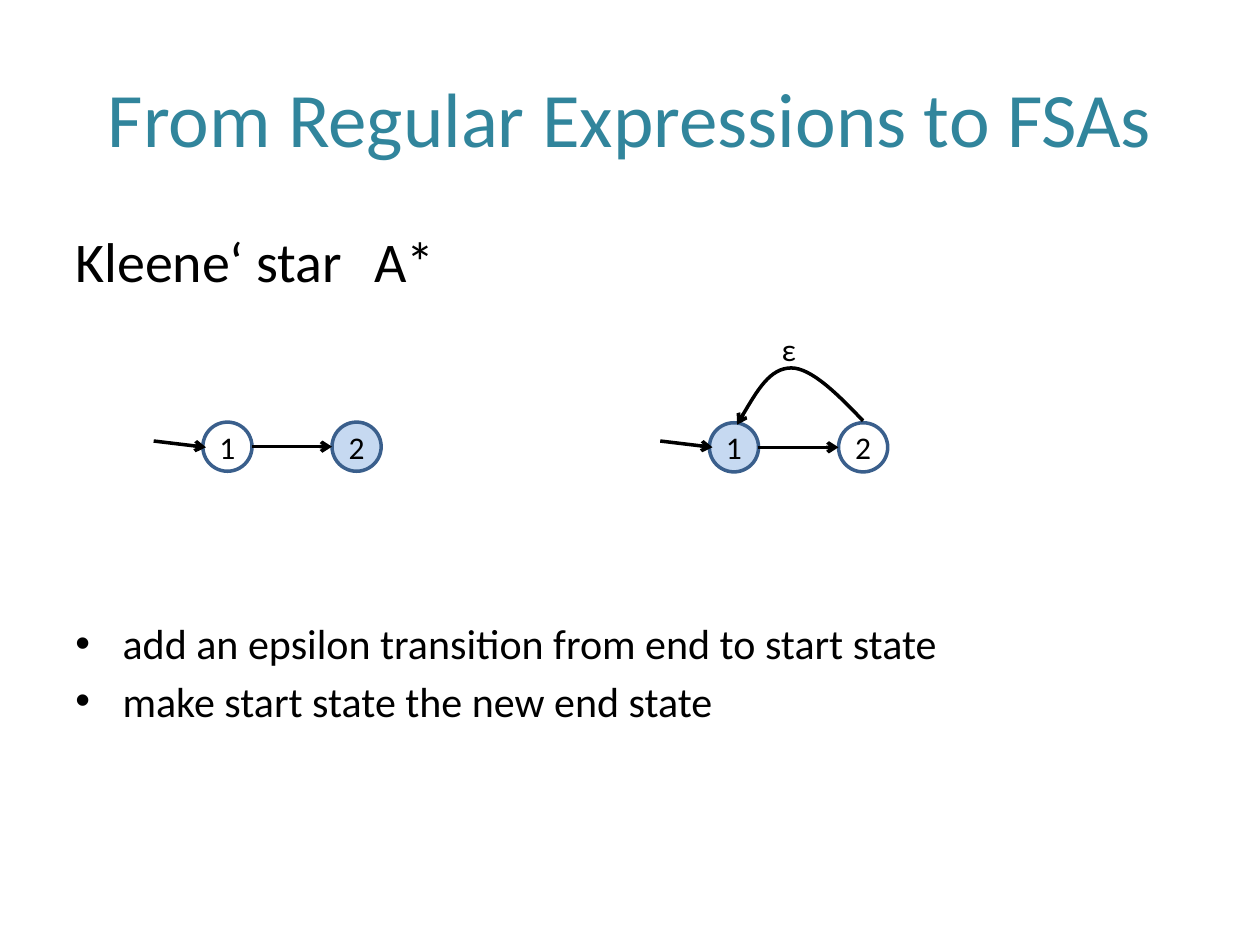
import dataclasses

import pptx
import pptx.dml.color
import pptx.enum.shapes
import pptx.enum.text
import pptx.oxml
import pptx.oxml.ns
import pptx.util

qn = pptx.oxml.ns.qn
Pt = pptx.util.Pt
ALIGN = pptx.enum.text.PP_ALIGN
ANCHOR = pptx.enum.text.MSO_ANCHOR


def rgb(value):
    return pptx.dml.color.RGBColor.from_string(value)


@dataclasses.dataclass(frozen=True)
class Theme:
    font: str = "Calibri"
    title: str = "31859C"
    ink: str = "000000"
    ring: str = "3A5F8C"
    accepting: str = "C6D9F1"
    title_size: int = 44
    heading_size: int = 32
    bullet_size: int = 24
    label_size: int = 18
    stroke: int = 2


class Deck:
    """Draws on one slide; lengths are cells of a 100 by 75 grid."""

    COLUMNS, ROWS = 100, 75
    STATE = 3.9     # diameter of a state
    STEP = 10.25    # distance between neighbouring states

    def __init__(self, prs, theme):
        self.theme = theme
        self.cell_w = prs.slide_width / self.COLUMNS
        self.cell_h = prs.slide_height / self.ROWS
        self.slide = prs.slides.add_slide(prs.slide_layouts[5])

    def at(self, *cells):
        """Turn alternating columns and rows into slide lengths."""
        sizes = (self.cell_w, self.cell_h)
        return [pptx.util.Emu(round(c * sizes[i % 2])) for i, c in enumerate(cells)]

    def run(self, p, text, size, color=None):
        r = p.add_run()
        r.text = text
        r.font.name = self.theme.font
        r.font.size = Pt(size)
        r.font.color.rgb = rgb(color or self.theme.ink)

    def title(self, text, *box):
        sp = self.slide.shapes.title
        sp.left, sp.top, sp.width, sp.height = self.at(*box)
        tf = sp.text_frame
        tf.vertical_anchor = ANCHOR.MIDDLE
        p = tf.paragraphs[0]
        p.alignment = ALIGN.CENTER
        self.run(p, text, self.theme.title_size, self.theme.title)

    def body(self, heading, bullets, gap, *box):
        """Heading with bullets below it; gap is the space above the first one."""
        tf = self.slide.shapes.add_textbox(*self.at(*box)).text_frame
        tf.word_wrap = True
        p = tf.paragraphs[0]
        self.hang(p)
        self.run(p, heading, self.theme.heading_size)
        for i, text in enumerate(bullets):
            p = tf.add_paragraph()
            p.space_before = Pt(4 if i else gap)
            self.hang(p, "•")
            self.run(p, text, self.theme.bullet_size)

    def hang(self, p, bullet=None):
        indent = self.at(3.75)[0]
        pPr = p._p.get_or_add_pPr()
        pPr.set("marL", str(indent))
        pPr.set("indent", str(-indent))
        if bullet:
            font = pptx.oxml.ns.nsdecls("a")
            pPr.append(pptx.oxml.parse_xml(f'<a:buFont {font} typeface="Arial"/>'))
            pPr.append(pptx.oxml.parse_xml(f'<a:buChar {font} char="{bullet}"/>'))

    def centred(self, sp, text):
        tf = sp.text_frame
        tf.word_wrap = False
        tf.margin_left = tf.margin_right = tf.margin_top = tf.margin_bottom = 0
        tf.vertical_anchor = ANCHOR.MIDDLE
        p = tf.paragraphs[0]
        p.alignment = ALIGN.CENTER
        self.run(p, text, self.theme.label_size)

    def label(self, text, *box):
        self.centred(self.slide.shapes.add_textbox(*self.at(*box)), text)

    def state(self, text, x, y, accepting):
        sp = self.slide.shapes.add_shape(
            pptx.enum.shapes.MSO_SHAPE.OVAL, *self.at(x, y, self.STATE, self.STATE))
        sp.shadow.inherit = False
        if accepting:
            sp.fill.solid()
            sp.fill.fore_color.rgb = rgb(self.theme.accepting)
        else:
            sp.fill.background()
        sp.line.color.rgb = rgb(self.theme.ring)
        sp.line.width = Pt(self.theme.stroke)
        self.centred(sp, text)

    def arrow_line(self, sp):
        sp.line.color.rgb = rgb(self.theme.ink)
        sp.line.width = Pt(self.theme.stroke)
        ln = sp.element.spPr.find(qn("a:ln"))
        ln.append(ln.makeelement(qn("a:tailEnd"), {"type": "arrow"}))

    def arrow(self, *ends):
        sp = self.slide.shapes.add_connector(
            pptx.enum.shapes.MSO_CONNECTOR.STRAIGHT, *self.at(*ends))
        self.arrow_line(sp)
        spPr = sp.element.spPr
        spPr.append(spPr.makeelement(qn("a:effectLst"), {}))

    def curved_arrow(self, start, *points):
        """Arrow along Bezier curves, three points for each curve."""
        builder = self.slide.shapes.build_freeform(*self.at(*start))
        builder.add_line_segments([self.at(*pt) for pt in points], close=False)
        sp = builder.convert_to_shape()
        sp.shadow.inherit = False
        sp.fill.background()
        self.arrow_line(sp)
        outline = next(sp.element.iter(qn("a:path")))
        lines = outline.findall(qn("a:lnTo"))
        for i in range(0, len(lines), 3):
            curve = outline.makeelement(qn("a:cubicBezTo"), {})
            outline.append(curve)
            for line in lines[i:i + 3]:
                curve.append(line[0])
                outline.remove(line)

    def automaton(self, x, y, accepting):
        """Two joined states with an entry arrow; x, y is the first state's corner."""
        middle = y + self.STATE / 2
        for i, name in enumerate(("1", "2")):
            self.state(name, x + i * self.STEP, y, name == accepting)
        self.arrow(x - 3.9, 35, x + 0.25, 35.5)
        self.arrow(x + self.STATE, middle, x + self.STEP, middle)


def main():
    prs = pptx.Presentation()
    prs.slide_width = pptx.util.Inches(10)
    prs.slide_height = pptx.util.Inches(7.5)
    deck = Deck(prs, Theme())
    deck.title("From Regular Expressions to FSAs", 5, 3, 90, 12.5)
    deck.body(
        "Kleene‘ star\tA*",
        ("add an epsilon transition from end to start state",
         "make start state the new end state"),
        185, 5, 17.5, 90, 49.5)
    deck.automaton(16.1, 33.5, accepting="2")
    deck.automaton(56.3, 33.55, accepting="1")
    deck.curved_arrow(
        (68.5, 33.4),
        (66.5, 31.3), (64.4, 29.2), (62.8, 29.2),
        (61.1, 29.2), (59.8, 31.5), (58.5, 33.7))
    deck.label("ε", 61, 25.7, 3.2, 4)
    prs.save("out.pptx")


if __name__ == "__main__":
    main()
